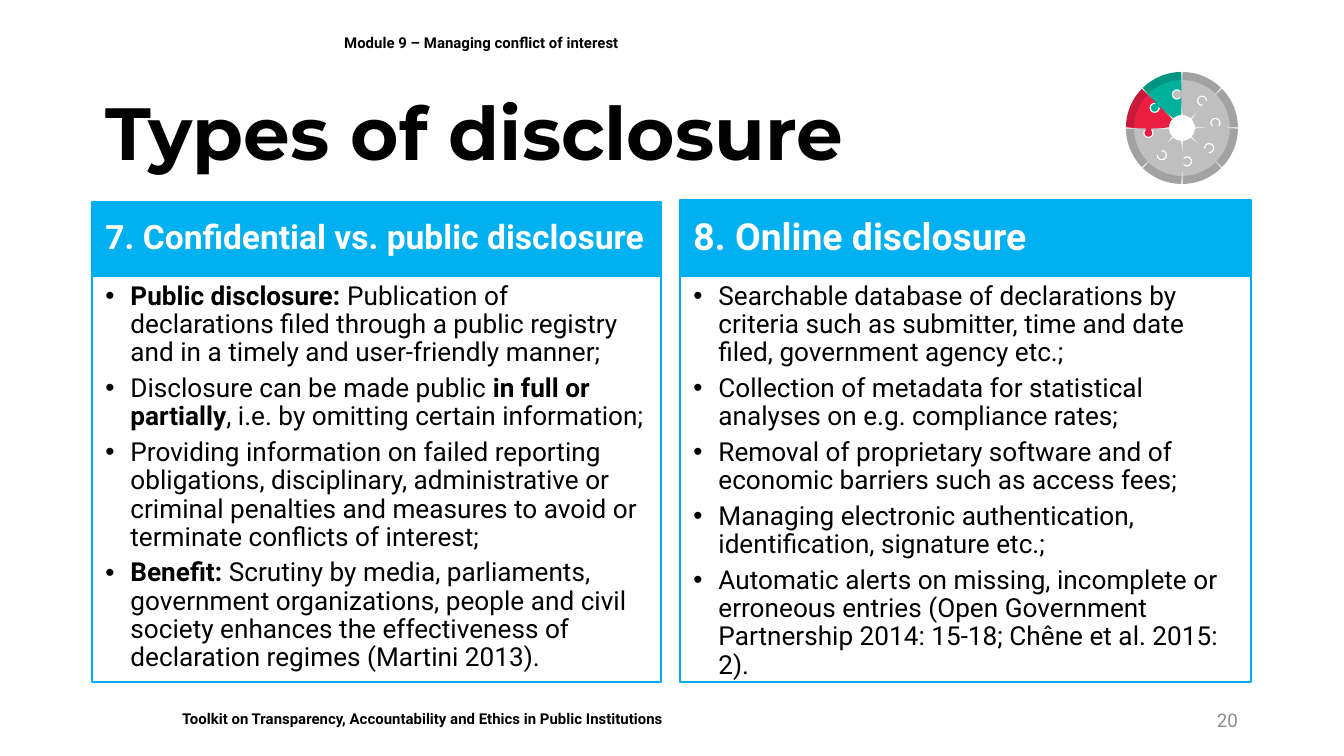
import math
from dataclasses import dataclass

import lxml.etree
import pptx
import pptx.dml.color
import pptx.enum.text
import pptx.oxml.ns
import pptx.util

PX = 914400 / 134.4
qn = pptx.oxml.ns.qn
ANCHOR = pptx.enum.text.MSO_ANCHOR
ALIGN = pptx.enum.text.PP_ALIGN


@dataclass(frozen=True)
class Theme:
    """Colours, fonts and type sizes of the deck."""
    accent: str = "00B0F0"
    ink: str = "000000"
    paper: str = "FFFFFF"
    muted: str = "8C8C8C"
    grey: str = "BFBFBF"
    green: str = "00B09B"
    red: str = "EB1E42"
    heading: str = "Montserrat"
    text: str = "Roboto"
    title_size: float = 39.6
    body_size: float = 14
    number_size: float = 10
    small_size: float = 8


T = Theme()

CONFIDENTIAL = [
    [("Public disclosure: ", True),
     ("Publication of declarations filed through a public registry and in a "
      "timely and user-friendly manner;", False)],
    [("Disclosure can be made public ", False), ("in full or partially", True),
     (", i.e. by omitting certain information;", False)],
    "Providing information on failed reporting obligations, disciplinary, "
    "administrative or criminal penalties and measures to avoid or terminate "
    "conflicts of interest;",
    [("Benefit: ", True),
     ("Scrutiny by media, parliaments, government organizations, people and "
      "civil society enhances the effectiveness of declaration regimes "
      "(Martini 2013).", False)],
]
ONLINE = [
    "Searchable database of declarations by criteria such as submitter, time "
    "and date filed, government agency etc.;",
    "Collection of metadata for statistical analyses on e.g. compliance rates;",
    "Removal of proprietary software and of economic barriers such as access fees;",
    "Managing electronic authentication, identification, signature etc.;",
    "Automatic alerts on missing, incomplete or erroneous entries (Open "
    "Government Partnership 2014: 15-18; Chêne et al. 2015: 2).",
]


def emu(px):
    """Turn px into EMU."""
    return pptx.util.Emu(round(px * PX))


def rgb(color):
    """Turn a hex string into a colour."""
    return pptx.dml.color.RGBColor.from_string(color)


def place(shape, box):
    """Move a shape to a px box and return it."""
    shape.left, shape.top, shape.width, shape.height = map(emu, box)
    return shape


def write(tf, paragraphs, size=T.body_size, color=T.ink, font=T.text, bold=False,
          align=ALIGN.LEFT, anchor=ANCHOR.TOP, spacing=1.0, before=0, hang=0):
    """Fill a text frame with paragraphs of plain text or (text, bold) runs."""
    tf.word_wrap = True
    tf.auto_size = pptx.enum.text.MSO_AUTO_SIZE.NONE
    tf.vertical_anchor = anchor
    for i, runs in enumerate(paragraphs):
        p = tf.add_paragraph() if i else tf.paragraphs[0]
        if hang:
            pPr = p._p.get_or_add_pPr()
            pPr.set("marL", str(emu(hang)))
            pPr.set("indent", str(-emu(hang)))
            lxml.etree.SubElement(pPr, qn("a:buChar"), char="•")
        p.alignment = align
        p.line_spacing = spacing
        p.space_before = pptx.util.Pt(before if i else 0)
        for text, strong in [(runs, bold)] if isinstance(runs, str) else runs:
            r = p.add_run()
            r.text = text
            r.font.name = font
            r.font.size = pptx.util.Pt(size)
            r.font.bold = strong
            r.font.color.rgb = rgb(color)


def label(s, box, text, **fmt):
    """Add a text box with one line of text."""
    tb = place(s.shapes.add_textbox(0, 0, 0, 0), box)
    write(tb.text_frame, [text], **fmt)


def panel(head, body, box, head_height, heading, head_size, points):
    """Place a filled heading over an outlined bullet list."""
    x, y, w, h = box
    place(head, (x, y, w, head_height))
    place(body, (x, y + head_height, w, h - head_height))
    for sp in (head, body):
        sp.line.color.rgb = rgb(T.accent)
        sp.line.width = pptx.util.Pt(0.75)
    head.fill.solid()
    head.fill.fore_color.rgb = rgb(T.accent)
    write(head.text_frame, [heading], size=head_size, color=T.paper, bold=True,
          anchor=ANCHOR.MIDDLE, spacing=0.9)
    write(body.text_frame, points, spacing=0.9, before=4, hang=25)


def edge(angle, inner, outer, gap, knob):
    """Return a radial edge, moved by gap, with an optional round knob."""
    points = [(inner, gap)]
    if knob:
        radius = 4.5 + gap
        for turn in range(-150, 151, 20):
            a = math.radians(turn)
            points.append((33.5 + radius * math.sin(a), 5 + radius * math.cos(a)))
    points.append((outer, gap))
    c, n = math.cos(angle), math.sin(angle)
    return [(u * c - v * n, u * n + v * c) for u, v in points]


def arc(start, end, radius, gap):
    """Return points on an arc between two edges."""
    trim = gap / radius
    span = end - start - 2 * trim
    return [(radius * math.cos(start + trim + span * k / 12),
             radius * math.sin(start + trim + span * k / 12)) for k in range(13)]


def sector(shapes, centre, index, inner, outer, color, knob=False, alpha=None):
    """Draw one eighth of a ring, counted anticlockwise from the right."""
    gap, start = 0.7, index * math.pi / 4
    end = start + math.pi / 4
    outline = (edge(start, inner, outer, gap, knob) + arc(start, end, outer, gap)
               + edge(end, inner, outer, -gap, knob)[::-1]
               + arc(start, end, inner, gap)[::-1])
    points = [(emu(centre[0] + x), emu(centre[1] - y)) for x, y in outline]
    fb = shapes.build_freeform(*points[0])
    fb.add_line_segments(points[1:], close=True)
    sp = fb.convert_to_shape()
    sp.shadow.inherit = False
    sp.line.fill.background()
    sp.fill.solid()
    sp.fill.fore_color.rgb = rgb(color)
    if alpha:
        clr = sp._element.spPr.find(".//" + qn("a:srgbClr"))
        lxml.etree.SubElement(clr, qn("a:alpha"), val=str(alpha * 1000))


def puzzle_wheel(s, box):
    """Draw the eight-piece progress wheel with a darker rim."""
    x, y, w, h = box
    centre, outer = (x + w / 2, y + h / 2), w / 2
    shapes = s.shapes.add_group_shape().shapes
    done = {2: T.green, 3: T.red}
    for i in range(8):
        sector(shapes, centre, i, 13, outer, done.get(i, T.grey), knob=True)
    for i in range(8):
        sector(shapes, centre, i, 48, outer, T.ink, alpha=15)


def disclosure_slide(prs):
    """Build the two-panel slide on the comparison layout."""
    s = prs.slides.add_slide(prs.slide_layouts[4])
    title, head_l, body_l, head_r, body_r = s.placeholders
    label(s, (169, 703, 964, 32),
          "Toolkit on Transparency, Accountability and Ethics in Public Institutions",
          size=T.small_size, bold=True)
    panel(head_l, body_l, (92, 202, 569, 480), 74,
          "7. Confidential vs. public disclosure", 18, CONFIDENTIAL)
    panel(head_r, body_r, (680, 200, 571, 482), 76, "8. Online disclosure", 20, ONLINE)
    label(s, (949, 700, 302, 40), "20", size=T.number_size, color=T.muted,
          align=ALIGN.RIGHT, anchor=ANCHOR.MIDDLE)
    label(s, (331, 13, 921, 59), "Module 9 – Managing conflict of interest",
          size=T.small_size, bold=True, anchor=ANCHOR.MIDDLE)
    place(title, (92, 86, 1159, 101))
    write(title.text_frame, ["Types of disclosure"], size=T.title_size,
          font=T.heading, bold=True, anchor=ANCHOR.MIDDLE, spacing=0.9)
    puzzle_wheel(s, (1126, 72, 112, 112))


def main():
    """Create and save the presentation."""
    prs = pptx.Presentation()
    prs.slide_width, prs.slide_height = emu(1344), emu(756)
    disclosure_slide(prs)
    prs.save("out.pptx")


if __name__ == "__main__":
    main()
